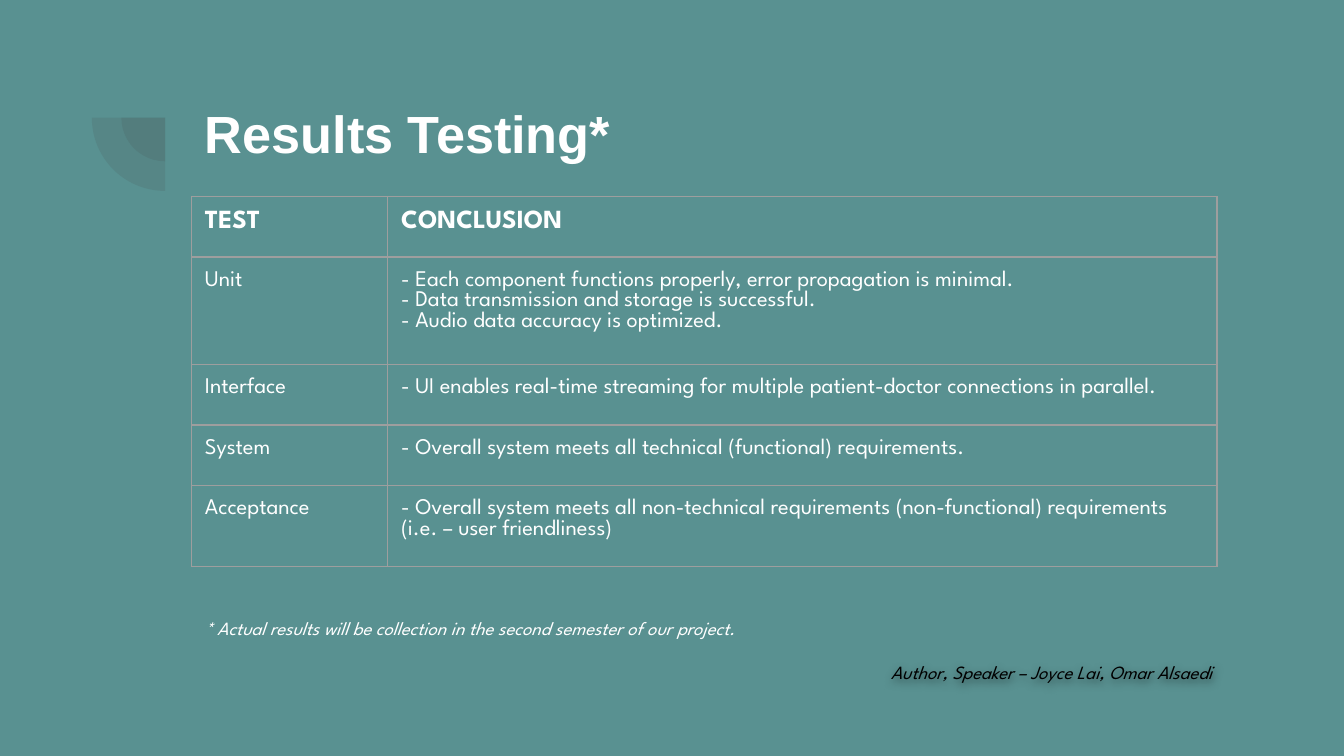
"""Build the results testing slide."""
from lxml import etree
from pptx import Presentation
from pptx.dml.color import RGBColor
from pptx.enum.shapes import MSO_SHAPE
from pptx.enum.text import MSO_ANCHOR, PP_ALIGN
from pptx.oxml.ns import qn
from pptx.util import Inches, Pt

PIE = MSO_SHAPE.PIE
TOP = MSO_ANCHOR.TOP
LEFT, RIGHT = PP_ALIGN.LEFT, PP_ALIGN.RIGHT

WIDTH = Inches(10)
HEIGHT = WIDTH * 9 // 16
COLORS = {
    "background": "599191",
    "ornament": "424242",
    "border": "9E9E9E",
    "light": "FFFFFF",
    "dark": "000000",
}
TITLE = {"name": "Arial", "size": Pt(28), "bold": True}
HEADING = {"name": "League Spartan", "size": Pt(14), "bold": True}
BODY = {"name": "League Spartan", "size": Pt(12), "bold": False}
NOTE = {"name": "League Spartan", "size": Pt(10), "italic": True}
MARGINS = {f"margin_{side}": Inches(0.1) for side in ("left", "top", "right", "bottom")}

CONTENT_LEFT = 14.25
COLUMN_SHARES = (14.6, 61.7)
ROW_SHARES = (8, 14.2, 8, 8, 10.7)
RESULTS = (
    ("TEST", ["CONCLUSION"]),
    ("Unit", [
        "- Each component functions properly, error propagation is minimal.",
        "- Data transmission and storage is successful.",
        "- Audio data accuracy is optimized.",
    ]),
    ("Interface", [
        "- UI enables real-time streaming for multiple patient-doctor connections in parallel.",
    ]),
    ("System", ["- Overall system meets all technical (functional) requirements."]),
    ("Acceptance", [
        "- Overall system meets all non-technical requirements (non-functional) "
        "requirements (i.e. – user friendliness)",
    ]),
)


def across(share):
    """Return a percentage of the slide width."""
    return int(WIDTH * share / 100)


def down(share):
    """Return a percentage of the slide height."""
    return int(HEIGHT * share / 100)


def color(name):
    """Return a named colour."""
    return RGBColor.from_string(COLORS[name])


def apply(target, values):
    """Set attributes from a dict of values."""
    for name, value in values.items():
        setattr(target, name, value)


def add_child(parent, tag, **attributes):
    """Append an XML element with the given attributes."""
    child = etree.SubElement(parent, qn(tag))
    for name, value in attributes.items():
        child.set(name, str(value))
    return child


def write(frame, lines, style, ink="light", align=LEFT):
    """Write one formatted paragraph for each line."""
    frame.text = "\n".join(lines)
    for paragraph in frame.paragraphs:
        paragraph.alignment = align
        font = paragraph.runs[0].font
        apply(font, style)
        font.color.rgb = color(ink)


def add_quarter(slide, radius):
    """Draw a translucent lower-left quarter disc beside the title."""
    centre_x, centre_y, reach = across(12.28), down(15.56), across(radius)
    shape = slide.shapes.add_shape(
        PIE, centre_x - reach, centre_y - reach, 2 * reach, 2 * reach)
    shape.adjustments[0], shape.adjustments[1] = 54, 108
    shape.shadow.inherit = False
    shape.line.fill.background()
    shape.fill.solid()
    shape.fill.fore_color.rgb = color("ornament")
    add_child(shape.fill._xPr.find(".//" + qn("a:srgbClr")), "a:alpha", val=13000)


def add_title(slide, text):
    """Fill and move the title placeholder."""
    title = slide.shapes.title
    apply(title, {"left": across(CONTENT_LEFT), "top": down(11.56),
                  "width": across(76.9), "height": down(14.4)})
    apply(title.text_frame, MARGINS)
    title.text_frame.vertical_anchor = TOP
    write(title.text_frame, [text], TITLE)


def add_note(slide, text, left, top, width, ink="light", align=LEFT):
    """Add a small italic line of text."""
    box = slide.shapes.add_textbox(across(left), down(top), across(width), down(6.58))
    apply(box.text_frame, MARGINS)
    box.text_frame.word_wrap = True
    write(box.text_frame, [text], NOTE, ink, align)
    return box


def add_soft_shadow(shape):
    """Give a shape a blurred shadow straight below it."""
    effects = add_child(shape.element.spPr, "a:effectLst")
    shadow = add_child(effects, "a:outerShdw", blurRad=57150, dist=19050,
                       dir=5400000, algn="bl", rotWithShape=0)
    ink = add_child(shadow, "a:srgbClr", val=COLORS["dark"])
    add_child(ink, "a:alpha", val=50000)


def format_cell(cell, lines, style):
    """Write a cell without fill and with thin borders."""
    apply(cell, MARGINS)
    cell.vertical_anchor = TOP
    write(cell.text_frame, lines, style)
    properties = cell._tc.get_or_add_tcPr()
    for side in "LRTB":
        line = add_child(properties, f"a:ln{side}", w=Pt(0.75))
        fill = add_child(line, "a:solidFill")
        add_child(fill, "a:srgbClr", val=COLORS["border"])
    cell.fill.background()


def add_results(slide):
    """Add the table of tests and conclusions."""
    table = slide.shapes.add_table(
        len(RESULTS), len(COLUMN_SHARES), across(CONTENT_LEFT), down(26),
        across(sum(COLUMN_SHARES)), down(sum(ROW_SHARES))).table
    table.horz_banding = False
    for column, share in zip(table.columns, COLUMN_SHARES):
        column.width = across(share)
    for index, (test, conclusions) in enumerate(RESULTS):
        table.rows[index].height = down(ROW_SHARES[index])
        style = BODY if index else HEADING
        format_cell(table.cell(index, 0), [test], style)
        format_cell(table.cell(index, 1), conclusions, style)


def main():
    """Build and save the slide."""
    presentation = Presentation()
    apply(presentation, {"slide_width": WIDTH, "slide_height": HEIGHT})
    slide = presentation.slides.add_slide(presentation.slide_layouts[5])
    slide.background.fill.solid()
    slide.background.fill.fore_color.rgb = color("background")
    for radius in (3.25, 5.45):
        add_quarter(slide, radius)
    add_title(slide, "Results Testing*")
    author = add_note(slide, "Author, Speaker – Joyce Lai, Omar Alsaedi",
                      57.4, 85.9, 33.75, "dark", RIGHT)
    add_soft_shadow(author)
    add_results(slide)
    add_note(slide, "* Actual results will be collection in the second semester of our project.",
             CONTENT_LEFT, 80.1, 63.1)
    presentation.save("out.pptx")


if __name__ == "__main__":
    main()
